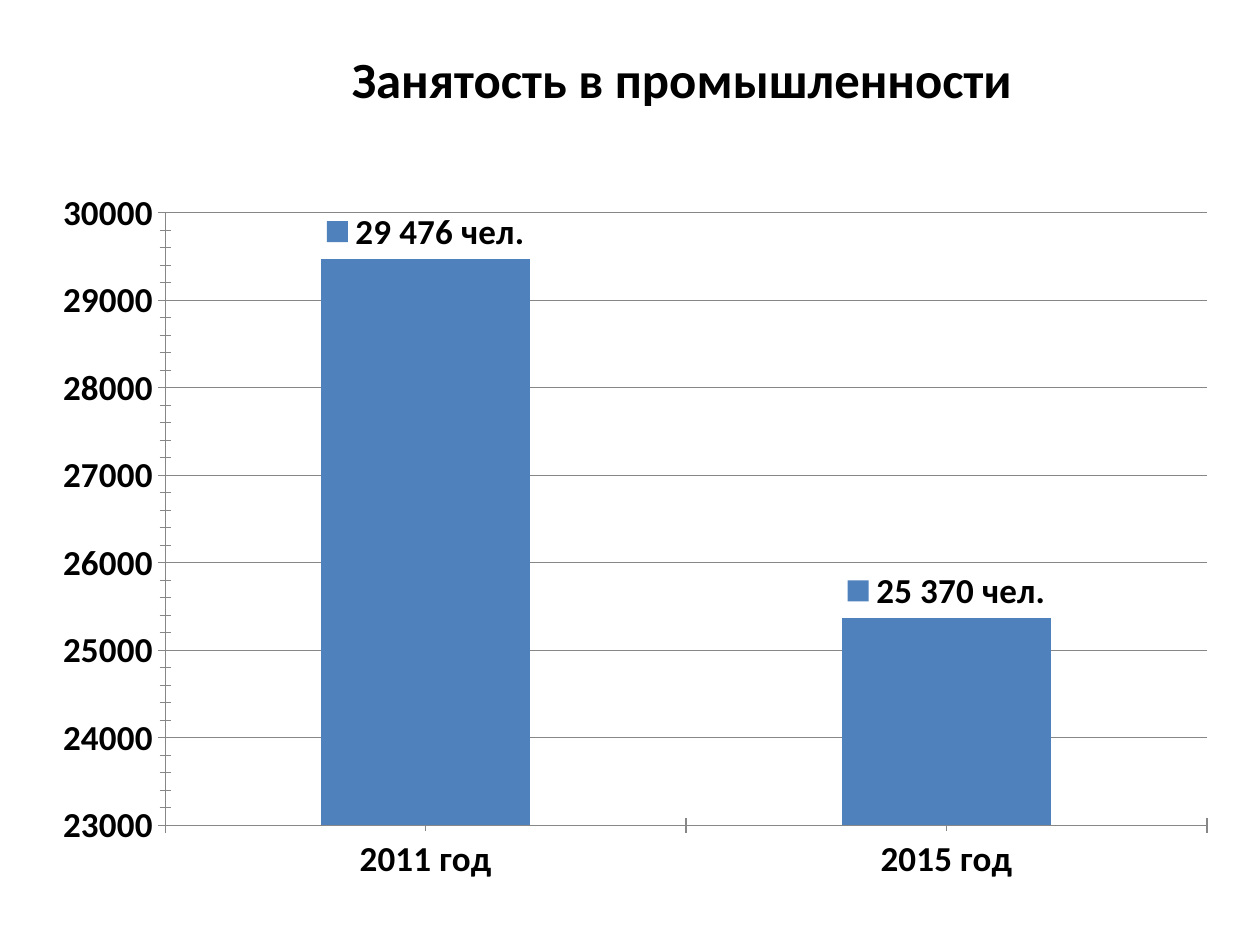
from lxml import etree
from pptx import Presentation
from pptx import util as u
from pptx.chart.data import CategoryChartData
from pptx.dml.color import RGBColor
from pptx.enum import chart as ch, text
from pptx.oxml.ns import qn

COLORS = {"text": "000000", "bar": "4F81BD", "line": "878787"}
FONT = "Calibri"
EMPLOYMENT = {"2011 год": 29476, "2015 год": 25370}


def style_font(font, size, bold=True):
    font.name, font.size, font.bold = FONT, u.Pt(size), bold
    font.color.rgb = RGBColor.from_string(COLORS["text"])


def write(tf, content, size, bold=True, align=text.PP_ALIGN.CENTER):
    p = tf.paragraphs[0]
    p.alignment = align
    r = p.add_run()
    r.text = content
    style_font(r.font, size, bold)


prs = Presentation()
prs.slide_width, prs.slide_height = u.Inches(10), u.Inches(7.5)
s = prs.slides.add_slide(prs.slide_layouts[6])

# Title
title = s.shapes.add_textbox(u.Inches(1.33), u.Inches(0.3), u.Inches(8.17), u.Inches(0.64))
tf = title.text_frame
tf.word_wrap = True
tf.vertical_anchor = text.MSO_ANCHOR.MIDDLE
write(tf, "Занятость в промышленности", size=29)

# Column chart
data = CategoryChartData(number_format="0")
data.categories = list(EMPLOYMENT)
data.add_series("Ряд 1", list(EMPLOYMENT.values()))
chart = s.shapes.add_chart(
    ch.XL_CHART_TYPE.COLUMN_CLUSTERED,
    u.Inches(0.31), u.Inches(1.41), u.Inches(9.45), u.Inches(5.7), data).chart
chart.has_legend = False
chart.has_title = False
style_font(chart.font, 18, bold=False)

plot = chart.plots[0]
plot.gap_width = 150
plot.vary_by_categories = False
series = plot.series[0]
series.format.fill.solid()
series.format.fill.fore_color.rgb = RGBColor.from_string(COLORS["bar"])

# Axes
val, cat = chart.value_axis, chart.category_axis
val.minimum_scale, val.maximum_scale = 23000, 30000
val.major_unit, val.minor_unit = 1000, 200
val.has_major_gridlines = True
val.tick_labels.number_format = "0"
val.tick_labels.number_format_is_linked = False
val.major_tick_mark, val.minor_tick_mark = ch.XL_TICK_MARK.OUTSIDE, ch.XL_TICK_MARK.CROSS
cat.major_tick_mark, cat.minor_tick_mark = ch.XL_TICK_MARK.CROSS, ch.XL_TICK_MARK.OUTSIDE
for axis in (val, cat):
    style_font(axis.tick_labels.font, 20)
for line in (val.format.line, cat.format.line, val.major_gridlines.format.line):
    line.color.rgb = RGBColor.from_string(COLORS["line"])
    line.width = u.Pt(0.7)

# Bar labels with a legend key, which takes its size from the series font
labels = series.data_labels
style_font(labels.font, 20)
labels.show_value = True
labels.show_legend_key = True
for i, value in enumerate(EMPLOYMENT.values()):
    label = series.points[i].data_label
    write(label.text_frame, f"{value:,} чел.".replace(",", " "), size=20)
    label.position = ch.XL_LABEL_POSITION.OUTSIDE_END
for key in chart.element.xpath(".//c:dLbl/c:showLegendKey"):
    key.set("val", "1")

# Fixed inner plot area, as fractions of the chart
area = chart.element.xpath(".//c:plotArea")[0]
for old in area.findall(qn("c:layout")):
    area.remove(old)
layout = etree.Element(qn("c:layout"))
manual = etree.SubElement(layout, qn("c:manualLayout"))
fractions = {"x": 1 / 9.45, "y": 0.28 / 5.7, "w": 8.27 / 9.45, "h": 4.86 / 5.7}
for tag, value in (("layoutTarget", "inner"), ("xMode", "edge"), ("yMode", "edge"),
                   *((side, round(part, 3)) for side, part in fractions.items())):
    etree.SubElement(manual, qn(f"c:{tag}")).set("val", str(value))
area.insert(0, layout)

prs.save("out.pptx")
